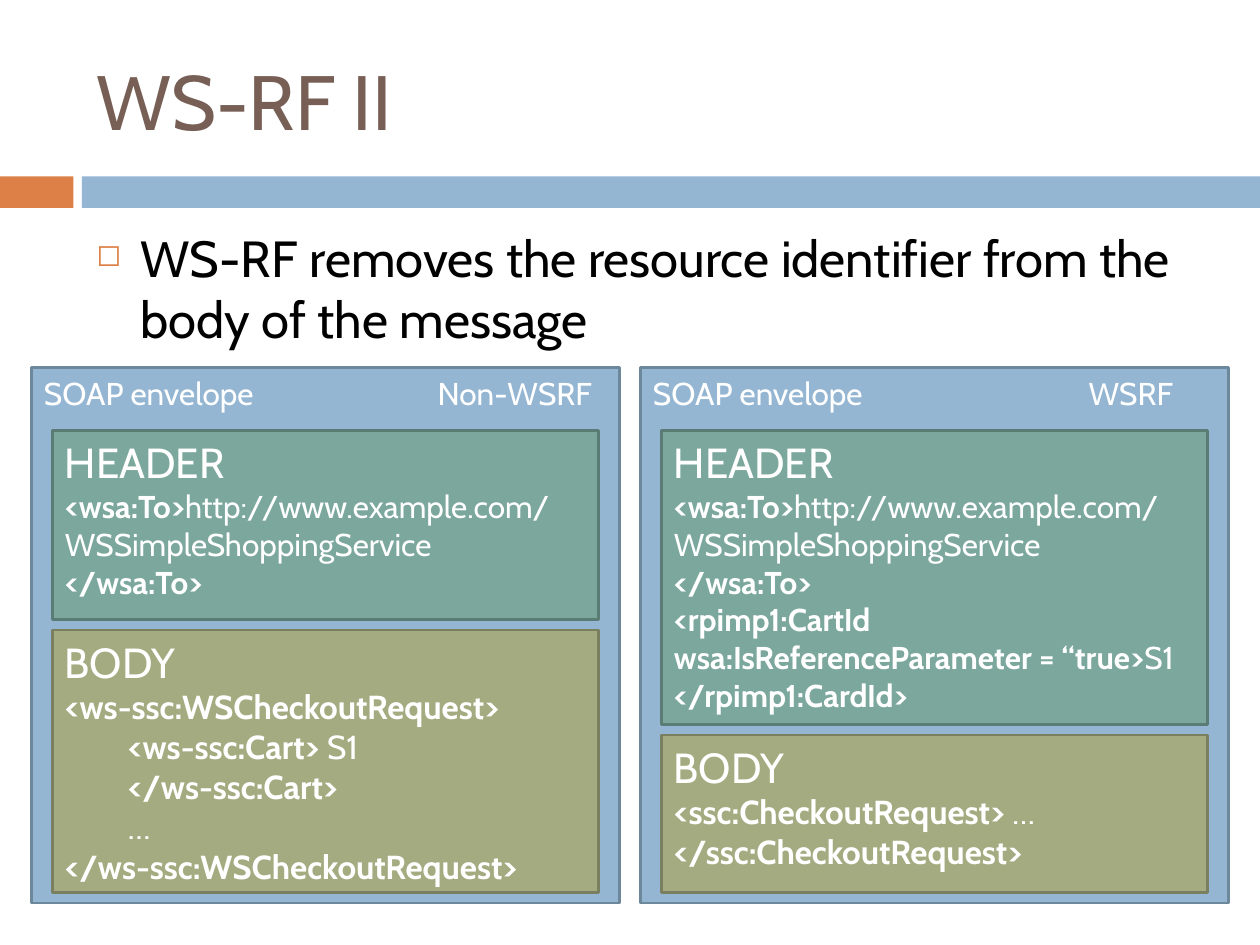
from lxml import etree
from pptx import Presentation
from pptx import util as u
from pptx.dml.color import RGBColor
from pptx.enum import shapes, text
from pptx.oxml.ns import qn

PX = 7620  # 120 px to the inch
FONT = "Cabin"
WHITE, BLUE, ORANGE = "FFFFFF", "94B6D2", "DD8047"

presentation = Presentation()
presentation.slide_width, presentation.slide_height = 1200 * PX, 900 * PX
slide = presentation.slides.add_slide(presentation.slide_layouts[6])


def add_box(box, fill=None, line=None, anchor=text.MSO_ANCHOR.TOP):
    """Add a rectangle, or a text box when there is no fill."""
    place = [length * PX for length in box]
    if fill:
        shape = slide.shapes.add_shape(shapes.MSO_SHAPE.RECTANGLE, *place)
        shape.shadow.inherit = False
        shape.fill.solid()
        shape.fill.fore_color.rgb = RGBColor.from_string(fill)
    else:
        shape = slide.shapes.add_textbox(*place)
    if line:
        shape.line.color.rgb = RGBColor.from_string(line)
        shape.line.width = u.Pt(1.5)
    else:
        shape.line.fill.background()
    shape.text_frame.word_wrap = True
    shape.text_frame.vertical_anchor = anchor
    return shape


def write(shape, lines, sizes, color=WHITE):
    """Write lines of runs; runs that open with a tag are bold. The last size carries on."""
    frame = shape.text_frame
    for index, runs in enumerate(lines):
        paragraph = frame.add_paragraph() if index else frame.paragraphs[0]
        paragraph.alignment = text.PP_ALIGN.LEFT
        size = sizes[min(index, len(sizes) - 1)]
        for words in runs:
            run = paragraph.add_run()
            run.text = words
            font_format = {"name": FONT, "size": u.Pt(size), "bold": words.startswith("<")}
            for name, value in font_format.items():
                setattr(run.font, name, value)
            run.font.color.rgb = RGBColor.from_string(color)
    return frame.paragraphs[0]


# Title band
add_box((0, 168, 70, 30), ORANGE)
add_box((78, 168, 1122, 30), BLUE)
title = add_box((80, 30, 1070, 130), anchor=text.MSO_ANCHOR.MIDDLE)
write(title, [["WS-RF II"]], [44], "775F55")

# Bullet
statement = add_box((80, 210, 1070, 150))
bullet = write(
    statement,
    [["WS-RF removes the resource identifier from the body of the message"]],
    [29],
    "000000",
)
bullet.space_before = u.Pt(7)
properties = bullet._p.get_or_add_pPr()
properties.set("marL", str(42 * PX))
properties.set("indent", str(-42 * PX))
bullet_color = etree.SubElement(properties, qn("a:buClr"))
etree.SubElement(bullet_color, qn("a:srgbClr"), val=ORANGE)
etree.SubElement(properties, qn("a:buSzPct"), val="60000")
etree.SubElement(properties, qn("a:buChar"), char="◻")

# Envelopes: left, label, label tab, header height, header lines, body lines
address = [
    ["<wsa:To>", "http://www.example.com/WSSimpleShoppingService"],
    ["</wsa:To>"],
]
reference = [
    ["<rpimp1:CartId wsa:IsReferenceParameter = “true>", "S1"],
    ["</rpimp1:CardId>"],
]
full_request = [
    ["<ws-ssc:WSCheckoutRequest>"],
    ["\t", "<ws-ssc:Cart>", " S1"],
    ["\t", "</ws-ssc:Cart>"],
    ["\t…"],
    ["</ws-ssc:WSCheckoutRequest>"],
]
short_request = [["<ssc:CheckoutRequest>", " …"], ["</ssc:CheckoutRequest>"]]
envelopes = [
    (30, "Non-WSRF", 375, 180, address, full_request),
    (610, "WSRF", 415, 280, address + reference, short_request),
]
INSET, GAP = 20, 10
HEADER_TOP, BODY_BOTTOM = 410, 850

for left, label, tab, header_height, header_lines, body_lines in envelopes:
    envelope = add_box((left, 350, 560, 510), BLUE, "6D879B")
    caption = write(envelope, [[f"SOAP envelope\t{label}"]], [18])
    tabs = etree.SubElement(caption._p.get_or_add_pPr(), qn("a:tabLst"))
    etree.SubElement(tabs, qn("a:tab"), pos=str(tab * PX), algn="l")

    inner_left, inner_width = left + INSET, 560 - 2 * INSET
    header = add_box((inner_left, HEADER_TOP, inner_width, header_height), "7BA79D", "5B7C74")
    write(header, [["HEADER"]] + header_lines, [24, 18])

    body_top = HEADER_TOP + header_height + GAP
    body = add_box((inner_left, body_top, inner_width, BODY_BOTTOM - body_top), "A5AB81", "7A7F5F")
    write(body, [["BODY"]] + body_lines, [24, 19])

presentation.save("out.pptx")
